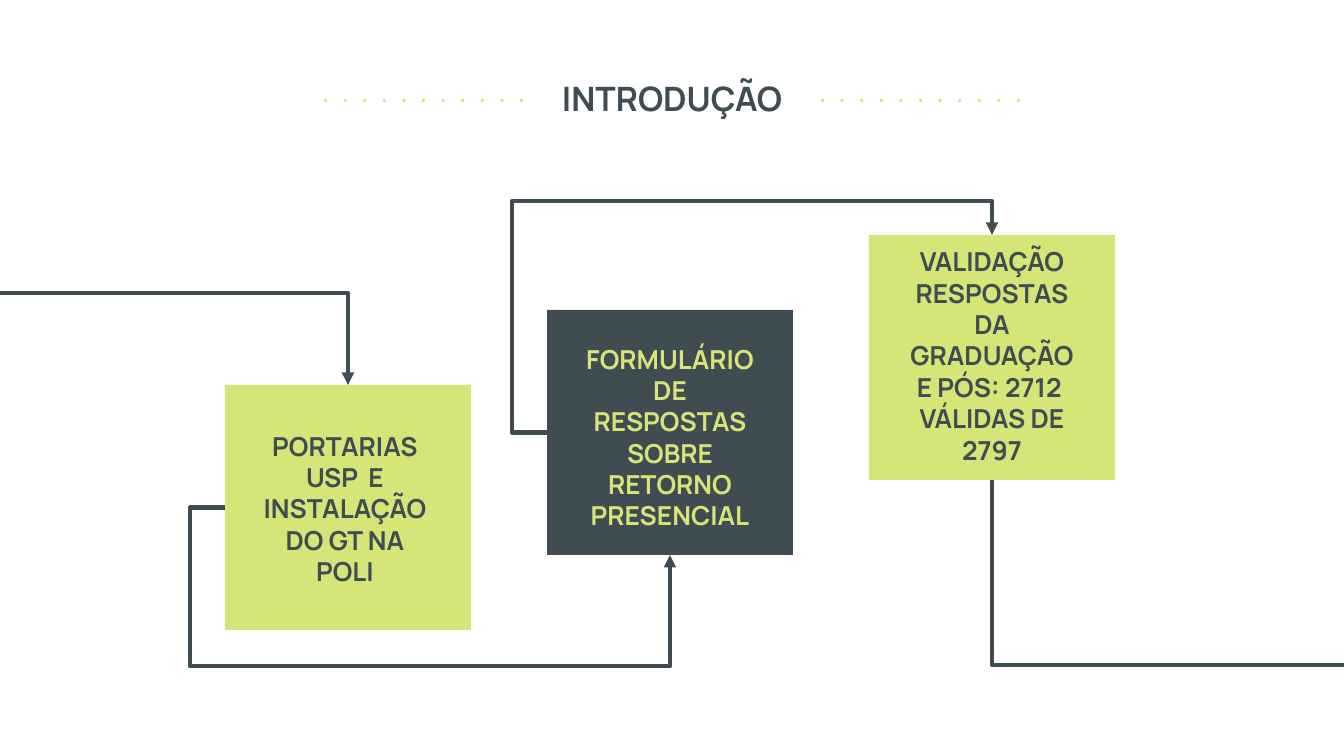
"""Build the introduction slide: three linked steps under a dotted title."""
from lxml import etree
from pptx import Presentation
from pptx import util as u
from pptx.dml.color import RGBColor
from pptx.enum import shapes, text
from pptx.oxml.ns import qn

PX = 914400 / 134.4
HUES = {"dark": "3F4D53", "lime": "D6E577"}


def write(words, box, size, hue, anchor):
    area = page.shapes.add_textbox(*[round(n * PX) for n in box])
    frame = area.text_frame
    frame.word_wrap = True
    frame.vertical_anchor = anchor
    frame.margin_left = frame.margin_right = u.Inches(0.1)
    frame.margin_top = frame.margin_bottom = u.Inches(0.1)
    frame.text = words
    line = frame.paragraphs[0]
    line.alignment = text.PP_ALIGN.CENTER
    font = line.runs[0].font
    font.name, font.size, font.bold = "Manrope", u.Pt(size), True
    font.color.rgb = RGBColor.from_string(HUES[hue])


def draw(kind, box, hue):
    shape = page.shapes.add_shape(kind, *[round(n * PX) for n in box])
    shape.shadow.inherit = False
    shape.fill.solid()
    shape.fill.fore_color.rgb = RGBColor.from_string(HUES[hue])
    shape.line.fill.background()
    return shape


deck = Presentation()
deck.slide_width, deck.slide_height = round(1344 * PX), round(756 * PX)
page = deck.slides.add_slide(deck.slide_layouts[6])

write("INTRODUÇÃO", (250, 65, 844, 84), 18, "dark", text.MSO_ANCHOR.TOP)
for left in (324, 821):
    for step in range(11):
        draw(shapes.MSO_SHAPE.OVAL, (left + step * 19.6, 99, 3, 3), "lime")

cards = [
    draw(shapes.MSO_SHAPE.RECTANGLE, (225 + 322 * i, 385 - 75 * i, 246, 245), hue)
    for i, hue in enumerate(("lime", "dark", "lime"))
]
first, second, third = cards

# start, end, bend, start card and side, end card and side, arrow
links = [
    ((225, 508), (670, 555), (190, 665), (first, 1), (second, 2), True),
    ((547, 433), (992, 235), (512, 201), (second, 1), (third, 0), True),
    ((1344, 665), (992, 480), None, None, (third, 2), False),
    ((0, 293), (348, 385), None, None, (first, 0), True),
]
for start, end, bend, source, target, arrow in links:
    link = page.shapes.add_connector(
        shapes.MSO_CONNECTOR.ELBOW, *[round(n * PX) for n in start + end])
    if source:
        link.begin_connect(*source)
    link.end_connect(*target)
    link.line.width = u.Pt(2.25)
    link.line.color.rgb = RGBColor.from_string(HUES["dark"])
    props = link._element.spPr
    geom = props.find(qn("a:prstGeom"))
    geom.set("prst", "bentConnector4" if bend else "bentConnector2")
    if bend:
        guides = geom.find(qn("a:avLst"))
        if guides is None:
            guides = etree.SubElement(geom, qn("a:avLst"))
        for axis in (0, 1):
            ratio = (bend[axis] - start[axis]) / (end[axis] - start[axis])
            etree.SubElement(guides, qn("a:gd"), name=f"adj{axis + 1}",
                             fmla=f"val {round(ratio * 100000)}")
    if arrow:
        etree.SubElement(props.find(qn("a:ln")), qn("a:tailEnd"), type="triangle")
    etree.SubElement(props, qn("a:effectLst"))

notes = [
    ("PORTARIAS USP  E INSTALAÇÃO DO GT NA POLI", (243, 401, 204, 215), "dark"),
    ("FORMULÁRIO DE RESPOSTAS SOBRE RETORNO PRESENCIAL", (568, 374, 204, 126), "lime"),
    ("VALIDAÇÃO RESPOSTAS DA GRADUAÇÃO E PÓS: 2712  VÁLIDAS DE 2797",
     (890, 233, 204, 245), "dark"),
]
for words, box, hue in notes:
    write(words, box, 14, hue, text.MSO_ANCHOR.MIDDLE)

deck.save("out.pptx")
